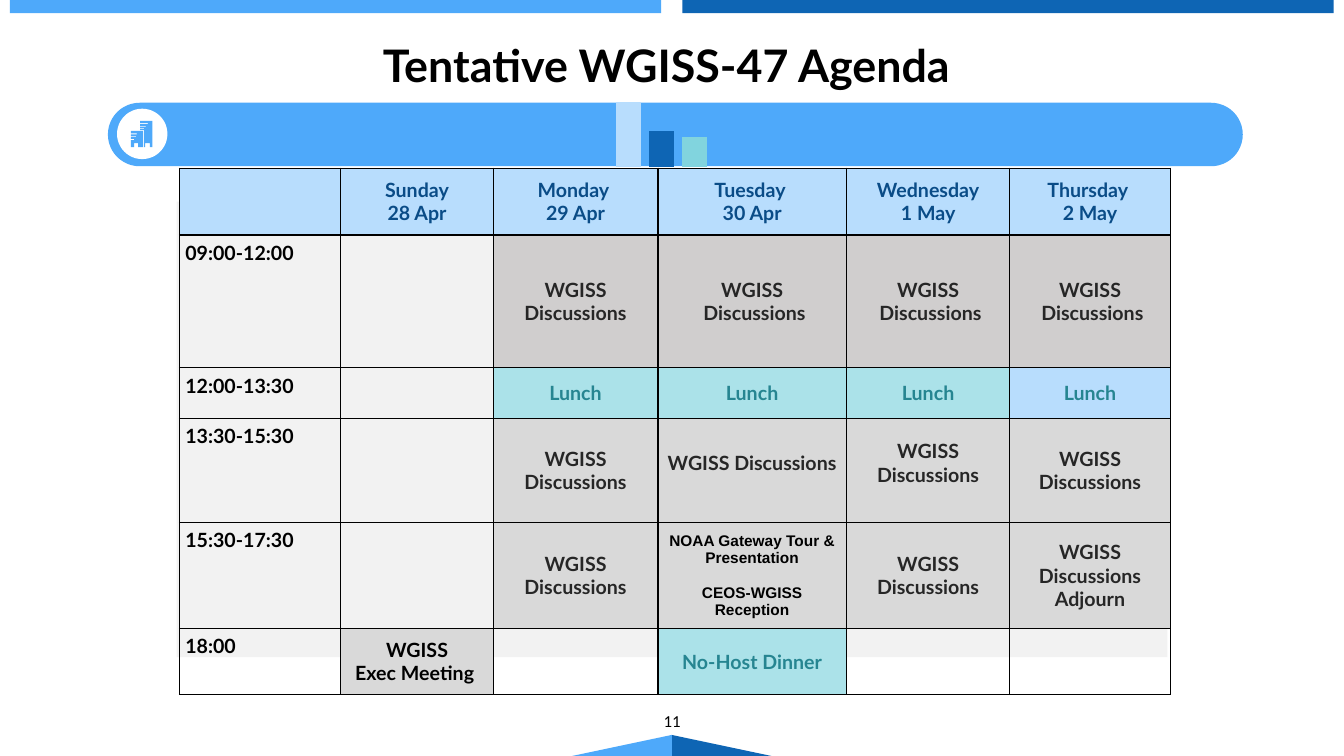
from dataclasses import dataclass
from typing import Any, Optional

from lxml.etree import SubElement
from pptx import Presentation
from pptx.chart.data import CategoryChartData
from pptx.dml.color import RGBColor as RGB
from pptx.enum.chart import XL_CHART_TYPE as ChartType
from pptx.enum.shapes import MSO_SHAPE as Shape
from pptx.enum.text import MSO_ANCHOR as Anchor, PP_ALIGN as Align
from pptx.oxml import parse_xml
from pptx.oxml.ns import nsdecls, qn
from pptx.util import Cm, Pt


@dataclass(frozen=True)
class Theme:
    sky: str = "4EA9FA"
    blue: str = "0E65B4"
    navy: str = "0A4C87"
    pale: str = "B8DDFD"
    teal: str = "81D4DE"
    mint: str = "ABE2E9"
    dark_teal: str = "268591"
    mist: str = "F2F2F2"
    silver: str = "D9D9D9"
    stone: str = "D0CECE"
    ink: str = "262626"
    black: str = "000000"
    white: str = "FFFFFF"
    heading: str = "Lato"
    plain: str = "Calibri"
    small: str = "Arial"
    title_size: int = 32
    table_size: int = 14
    number_size: int = 12
    visit_size: int = 11
    chart_size: int = 10


THEME = Theme()


@dataclass(frozen=True)
class Block:
    """A plain preset shape, lengths in cm."""
    kind: Shape
    left: float
    top: float
    width: float
    height: float
    fill: str


@dataclass(frozen=True)
class Slot:
    """One cell of the agenda."""
    words: str = ""
    fill: Optional[str] = None
    color: str = THEME.ink
    font: str = THEME.heading
    size: int = THEME.table_size
    align: Align = Align.CENTER
    anchor: Anchor = Anchor.MIDDLE
    gap: float = 0  # points between paragraphs
    foot: float = 0.15  # bottom margin in cm


def apply(target: Any, values: dict) -> None:
    for name, value in values.items():
        setattr(target, name, value)


def style_text(frame, font: str, size: int, color: str, bold: bool, align: Align, gap: float = 0) -> None:
    for index, paragraph in enumerate(frame.paragraphs):
        paragraph.alignment = align
        if gap and index:
            paragraph.space_before = Pt(gap)
        for run in paragraph.runs:
            apply(run.font, {"name": font, "size": Pt(size), "bold": bold})
            run.font.color.rgb = RGB.from_string(color)


def paint(shape, fill: str) -> None:
    shape.shadow.inherit = False
    shape.fill.solid()
    shape.fill.fore_color.rgb = RGB.from_string(fill)
    shape.line.fill.background()


def draw_block(slide, block: Block) -> None:
    box = map(Cm, (block.left, block.top, block.width, block.height))
    paint(slide.shapes.add_shape(block.kind, *box), block.fill)


def draw_outline(slide, points: list, fill: str) -> None:
    start, *rest = [(Cm(x), Cm(y)) for x, y in points]
    builder = slide.shapes.build_freeform(*start, scale=1.0)
    builder.add_line_segments(rest, close=True)
    paint(builder.convert_to_shape(), fill)


def draw_label(slide, words: str, box: tuple, margin: Optional[float], **look) -> None:
    frame = slide.shapes.add_textbox(*map(Cm, box)).text_frame
    apply(frame, {"word_wrap": True, "vertical_anchor": Anchor.MIDDLE, "text": words})
    if margin is not None:
        apply(frame, {f"margin_{side}": Cm(margin) for side in ("left", "top", "right", "bottom")})
    style_text(frame, align=Align.CENTER, **look)


def draw_slot(cell, slot: Slot) -> None:
    if slot.words:
        apply(cell, {"margin_left": Cm(0.15), "margin_right": Cm(0.15), "margin_top": Cm(0.15),
                     "margin_bottom": Cm(slot.foot), "vertical_anchor": slot.anchor})
        cell.text_frame.text = slot.words
        style_text(cell.text_frame, slot.font, slot.size, slot.color, True, slot.align, slot.gap)
    if slot.fill:
        cell.fill.solid()
        cell.fill.fore_color.rgb = RGB.from_string(slot.fill)
    else:
        cell.fill.background()
    # Borders come before the fill in the cell properties
    properties = cell._tc.get_or_add_tcPr()
    for place, side in enumerate(("lnL", "lnR", "lnT", "lnB")):
        properties.insert(place, parse_xml(
            f'<a:{side} {nsdecls("a")} w="12700"><a:solidFill><a:srgbClr val="{THEME.black}"/>'
            f'</a:solidFill></a:{side}>'))


def draw_agenda(slide, columns: list, rows: list, slots: list) -> None:
    frame = slide.shapes.add_table(len(rows), len(columns), Cm(4.52), Cm(4.24),
                                   Cm(sum(columns)), Cm(sum(rows)))
    agenda = frame.table
    apply(agenda, {"first_row": False, "horz_banding": False})
    for column, width in zip(agenda.columns, columns):
        column.width = Cm(width)
    for row, height, line in zip(agenda.rows, rows, slots):
        row.height = Cm(height)
        for cell, slot in zip(row.cells, line):
            draw_slot(cell, slot)


def draw_bars(slide, bars: list) -> None:
    data = CategoryChartData()
    data.categories = ["1"]
    for number, (value, _) in enumerate(bars, 1):
        data.add_series(f"Series {number}", [value])
    chart = slide.shapes.add_chart(ChartType.COLUMN_CLUSTERED, Cm(14.73), Cm(2.26),
                                   Cm(3.89), Cm(2.08), data).chart
    apply(chart, {"has_legend": False, "has_title": False})
    apply(chart.font, {"name": THEME.plain, "size": Pt(THEME.chart_size)})
    chart.font.color.rgb = RGB.from_string(THEME.black)
    apply(chart.value_axis, {"minimum_scale": 0, "maximum_scale": 100,
                             "has_major_gridlines": False, "visible": False})
    chart.category_axis.visible = False
    plot = chart.plots[0]
    apply(plot, {"gap_width": 225, "overlap": -30, "vary_by_categories": False})
    for series, (_, color) in zip(plot.series, bars):
        series.format.fill.solid()
        series.format.fill.fore_color.rgb = RGB.from_string(color)
    # Fixed plot area
    area = chart.element.xpath("c:chart/c:plotArea")[0]
    for old in area.findall(qn("c:layout")):
        area.remove(old)
    layout = parse_xml(f'<c:layout {nsdecls("c")}><c:manualLayout/></c:layout>')
    area.insert(0, layout)
    for tag, value in {"layoutTarget": "inner", "xMode": "edge", "yMode": "edge",
                       "x": 0.02, "y": 0.15, "w": 0.96, "h": 0.79}.items():
        SubElement(layout[0], qn(f"c:{tag}")).set("val", str(value))


def agenda_slots() -> list:
    def day(words: str) -> Slot:
        return Slot(words, THEME.pale, THEME.navy)

    def time(words: str) -> Slot:
        return Slot(words, color=THEME.black, align=Align.LEFT, anchor=Anchor.TOP)

    def lunch(fill: str) -> Slot:
        return Slot("Lunch", fill, THEME.dark_teal)

    free = Slot()
    talks = Slot("WGISS Discussions", THEME.silver)
    raised = Slot(talks.words, THEME.silver, foot=0.55)
    morning = Slot("WGISS\n Discussions", THEME.stone)
    visit = Slot("NOAA Gateway Tour & Presentation\nCEOS-WGISS Reception", THEME.silver,
                 THEME.black, THEME.small, THEME.visit_size, gap=12.65)
    days = ["Sunday\n28 Apr", "Monday \n29 Apr", "Tuesday \n30 Apr", "Wednesday\n1 May", "Thursday \n2 May"]
    return [
        [Slot(fill=THEME.pale), *map(day, days)],
        [time("09:00-12:00"), free, Slot(talks.words, THEME.stone), *[morning] * 3],
        [time("12:00-13:30"), free, *[lunch(THEME.mint)] * 3, lunch(THEME.pale)],
        [time("13:30-15:30"), free, talks, raised, raised, talks],
        [time("15:30-17:30"), free, talks, visit, talks, Slot(talks.words + "\nAdjourn", THEME.silver)],
        [time("18:00"), Slot("WGISS\nExec Meeting ", THEME.silver, THEME.black), free,
         Slot("No-Host Dinner", THEME.mint, THEME.dark_teal), free, free],
    ]


def main() -> None:
    deck = Presentation()
    apply(deck, {"slide_width": Cm(33.87), "slide_height": Cm(19.05)})
    slide = deck.slides.add_slide(deck.slide_layouts[6])

    # Page edges: folded foot and top bars
    for reach, fill in ((2.51, THEME.blue), (-2.51, THEME.sky)):
        draw_outline(slide, [(16.93, 18.52), (16.93 + reach, 19.05), (16.93, 19.05)], fill)
    for left, fill in ((0.25, THEME.sky), (17.2, THEME.blue)):
        draw_block(slide, Block(Shape.RECTANGLE, left, 0, 16.41, 0.33, fill))

    # Title and page number
    draw_label(slide, "Tentative WGISS-47 Agenda ", (-0.91, 0.94, 35.69, 1.37), 0,
               font=THEME.heading, size=THEME.title_size, color=THEME.black, bold=True)
    draw_label(slide, "11", (13.13, 17.65, 7.62, 1.02), None,
               font=THEME.plain, size=THEME.number_size, color=THEME.black, bold=False)

    # Table backdrop, banner and its badge
    draw_block(slide, Block(Shape.RECTANGLE, 4.45, 5.08, 24.97, 11.48, THEME.mist))
    banner = Block(Shape.ROUNDED_RECTANGLE, 2.72, 2.59, 28.6, 1.6, THEME.sky)
    draw_block(slide, banner)
    slide.shapes[-1].adjustments[0] = 0.5
    draw_block(slide, Block(Shape.OVAL, 2.95, 2.74, 1.27, 1.27, THEME.white))
    tower = [(3.84, 3.05), (3.53, 3.05), (3.53, 3.1), (3.73, 3.1), (3.73, 3.12), (3.53, 3.12),
             (3.53, 3.18), (3.68, 3.18), (3.68, 3.2), (3.53, 3.2), (3.53, 3.23), (3.63, 3.23),
             (3.63, 3.25), (3.53, 3.25), (3.53, 3.28), (3.63, 3.28), (3.63, 3.71), (3.66, 3.71),
             (3.66, 3.61), (3.78, 3.61), (3.78, 3.71), (3.84, 3.71)]
    office = [(3.61, 3.3), (3.3, 3.3), (3.3, 3.36), (3.45, 3.36), (3.45, 3.39), (3.3, 3.39),
              (3.3, 3.43), (3.43, 3.43), (3.43, 3.45), (3.3, 3.45), (3.3, 3.5), (3.38, 3.5),
              (3.38, 3.53), (3.3, 3.53), (3.3, 3.71), (3.38, 3.71), (3.38, 3.61), (3.48, 3.61),
              (3.48, 3.71), (3.61, 3.71)]
    for building in (tower, office):
        draw_outline(slide, building, THEME.sky)

    # Bars and agenda
    draw_bars(slide, [(100, THEME.pale), (56, THEME.blue), (47, THEME.teal)])
    draw_agenda(slide, [4.07, 3.84, 4.15, 4.75, 4.12, 4.04],
                [1.68, 3.35, 1.28, 2.62, 2.66, 1.68], agenda_slots())
    deck.save("out.pptx")


if __name__ == "__main__":
    main()
